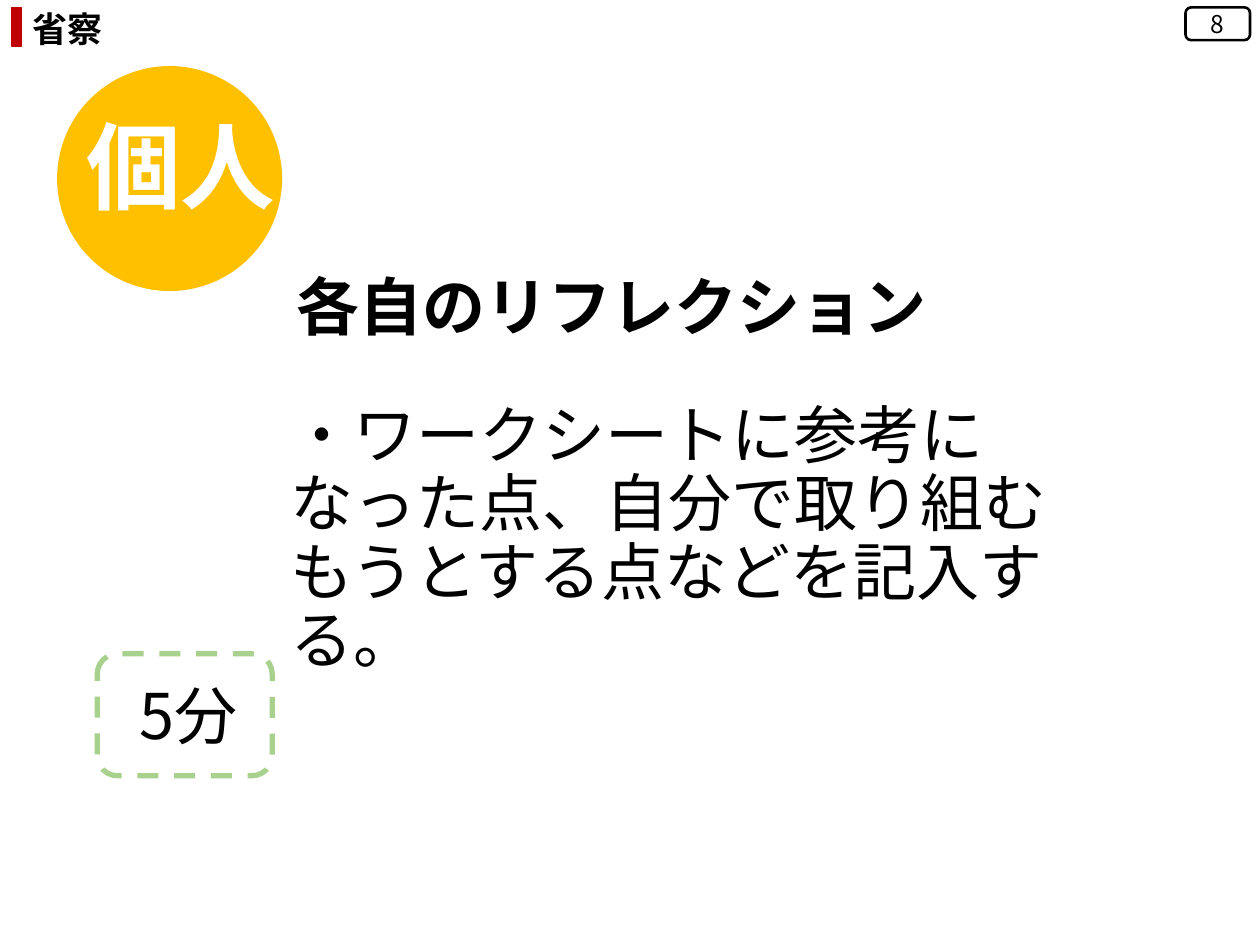
from dataclasses import dataclass
from typing import Optional

from lxml.etree import SubElement
from pptx import Presentation
from pptx.dml.color import RGBColor
from pptx.enum.dml import MSO_LINE
from pptx.enum.lang import MSO_LANGUAGE_ID
from pptx.enum.shapes import MSO_SHAPE
from pptx.enum.text import MSO_ANCHOR, MSO_AUTO_SIZE, PP_ALIGN
from pptx.oxml.ns import qn
from pptx.util import Cm, Pt

FONT = "Noto Sans CJK JP"


@dataclass
class Box:
    left: float
    top: float
    width: float
    height: float

    def place(self) -> tuple:
        return Cm(self.left), Cm(self.top), Cm(self.width), Cm(self.height)


@dataclass
class Label:
    box: Box
    text: str
    size: int
    color: str = "000000"
    bold: bool = False
    center: bool = False
    grow: bool = True


@dataclass
class Panel:
    box: Box
    kind: MSO_SHAPE
    line: str
    weight: float = 1
    fill: Optional[str] = None
    dash: bool = False
    label: Optional[Label] = None


def tint(code: str) -> RGBColor:
    return RGBColor.from_string(code)


def write(frame, label: Label) -> None:
    para = frame.paragraphs[0]
    para.alignment = PP_ALIGN.CENTER if label.center else PP_ALIGN.LEFT
    if not label.grow:
        para.line_spacing = 0.9
        para.space_before = Pt(10)
    run = para.add_run()
    run.text = label.text
    font = run.font
    font.size, font.bold, font.name = Pt(label.size), label.bold, FONT
    font.color.rgb = tint(label.color)
    font.language_id = MSO_LANGUAGE_ID.JAPANESE
    SubElement(run._r.get_or_add_rPr(), qn("a:ea"), typeface=FONT)


def draw_label(shapes, label: Label) -> None:
    frame = shapes.add_textbox(*label.box.place()).text_frame
    frame.word_wrap = True
    if label.grow:
        frame.auto_size = MSO_AUTO_SIZE.SHAPE_TO_FIT_TEXT
    write(frame, label)


def draw_panel(shapes, panel: Panel) -> None:
    shape = shapes.add_shape(panel.kind, *panel.box.place())
    shape.shadow.inherit = False
    if panel.fill:
        shape.fill.solid()
        shape.fill.fore_color.rgb = tint(panel.fill)
    else:
        shape.fill.background()
    shape.line.color.rgb = tint(panel.line)
    shape.line.width = Pt(panel.weight)
    if panel.dash:
        shape.line.dash_style = MSO_LINE.DASH
    if panel.label:
        shape.text_frame.vertical_anchor = MSO_ANCHOR.MIDDLE
        write(shape.text_frame, panel.label)


def draw(shapes, items: list) -> None:
    for item in items:
        if isinstance(item, Panel):
            draw_panel(shapes, item)
        else:
            draw_label(shapes, item)


def main() -> None:
    """Build the reflection slide and save it."""
    deck = Presentation()
    deck.slide_width, deck.slide_height = Cm(25.4), Cm(19.05)
    shapes = deck.slides.add_slide(deck.slide_layouts[6]).shapes

    badge = [
        Panel(Box(1.17, 1.35, 4.5, 4.5), MSO_SHAPE.OVAL, "FFC000", fill="FFC000"),
        Label(Box(1.17, 2.06, 4.95, 2.57), "個人", 54, "FFFFFF", bold=True, center=True),
    ]
    timer = [
        Panel(Box(1.96, 13.18, 3.53, 2.46), MSO_SHAPE.ROUNDED_RECTANGLE,
              "A9D18E", 3, dash=True),
        Label(Box(2.08, 13.51, 3.45, 1.8), "5分", 36, center=True),
    ]
    body = [
        Label(Box(5.61, 8.03, 16.56, 7.54),
              "・ワークシートに参考になった点、自分で取り組むもうとする点などを記入する。",
              36, grow=False),
        Label(Box(5.72, 5.44, 18.64, 4.8), "各自のリフレクション", 36,
              bold=True, grow=False),
    ]
    page = Box(23.9, 0.15, 1.3, 0.66)
    header = [
        Label(Box(0.41, 0.03, 8.69, 1.12), "省察", 20, bold=True),
        Panel(Box(0.25, 0.15, 0.18, 0.79), MSO_SHAPE.RECTANGLE, "C00000", fill="C00000"),
        Panel(page, MSO_SHAPE.ROUNDED_RECTANGLE, "000000", 1.5, "FFFFFF",
              label=Label(page, "8", 14, center=True)),
    ]
    for group in (badge, timer):
        draw(shapes.add_group_shape().shapes, group)
    draw(shapes, body)
    draw(shapes.add_group_shape().shapes, header)
    deck.save("out.pptx")


if __name__ == "__main__":
    main()
